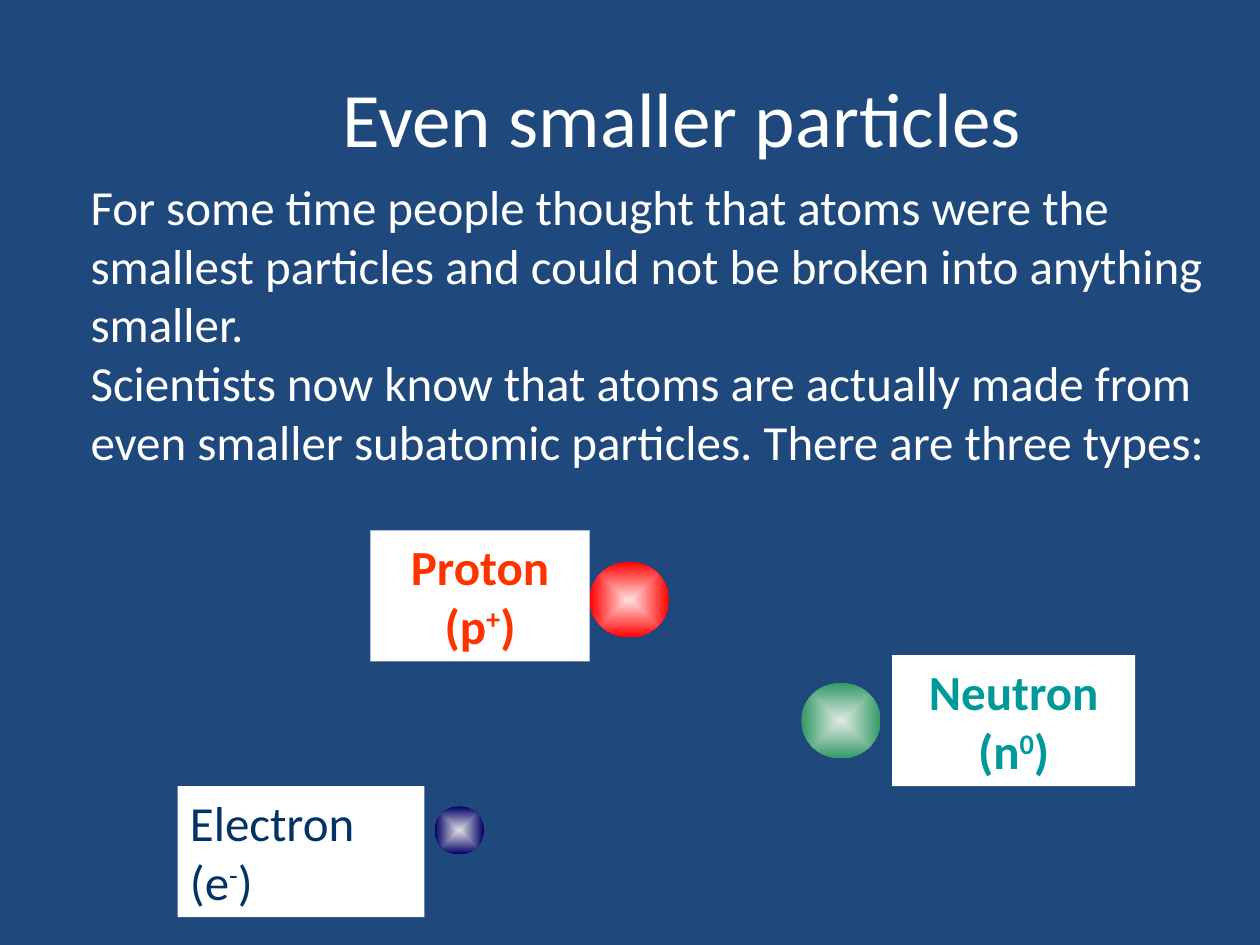
from lxml.etree import SubElement
from pptx import Presentation
from pptx.dml.color import RGBColor
from pptx.enum.shapes import MSO_SHAPE as SHAPE
from pptx.enum.text import MSO_ANCHOR as ANCHOR, PP_ALIGN as ALIGN
from pptx.oxml.ns import qn
from pptx.util import Inches, Pt

COLORS = {
    "background": "1F497D",
    "white": "FFFFFF",
    "proton": "FF3300",
    "neutron": "009999",
    "electron": "013366",
    "proton_core": "FFDEDE",
    "proton_edge": "FF0000",
    "neutron_core": "DFE9E2",
    "neutron_edge": "339966",
    "electron_core": "DEDEE2",
    "electron_edge": "010066",
}
INTRO = [
    "For some time people thought that atoms were the smallest particles "
    "and could not be broken into anything smaller.",
    "Scientists now know that atoms are actually made from even smaller "
    "subatomic particles. There are three types:",
]
PARTICLES = [
    ("proton", "Proton (p", "+", (2.94, 4.21, 1.74, 1.04), (4.68, 4.46, 0.63, 0.6), True),
    ("neutron", "Neutron (n", "0", (7.08, 5.2, 1.93, 1.04), (6.36, 5.42, 0.63, 0.6), True),
    ("electron", "Electron (e", "-", (1.41, 6.24, 1.96, 1.04), (3.45, 6.4, 0.39, 0.38), False),
]


def rgb(name):
    """Return the named colour."""
    return RGBColor.from_string(COLORS[name])


def box(sizes):
    """Turn left, top, width and height in inches into lengths."""
    return [Inches(v) for v in sizes]


def add_text(p, text, size=28, color="white", bold=False, baseline=0):
    """Add one formatted run to a paragraph."""
    r = p.add_run()
    r.text = text
    r.font.name = "Calibri"
    r.font.size = Pt(size)
    r.font.bold = bold
    r.font.color.rgb = rgb(color)
    if baseline:
        r.font._element.set("baseline", str(baseline * 1000))


def add_plain_shape(s, kind, sizes):
    """Add a preset shape without shadow or outline."""
    sp = s.shapes.add_shape(kind, *box(sizes))
    sp.shadow.inherit = False
    sp.line.fill.background()
    return sp


def add_title(s, text):
    """Place the title, set off to the right of the centre."""
    sp = s.shapes.title
    sp.left, sp.top, sp.width, sp.height = box((0.5, 0.3, 9, 1.25))
    tf = sp.text_frame
    tf.vertical_anchor = ANCHOR.MIDDLE
    tf.margin_left = Inches(0.93)
    p = tf.paragraphs[0]
    p.alignment = ALIGN.CENTER
    add_text(p, text, size=44)


def add_intro(s, paragraphs):
    """Add the introductory paragraphs."""
    tf = s.shapes.add_textbox(*box((0.62, 1.35, 9.38, 2.76))).text_frame
    tf.word_wrap = True
    for i, text in enumerate(paragraphs):
        add_text(tf.add_paragraph() if i else tf.paragraphs[0], text)


def add_ball(s, name, sizes):
    """Add a particle shaded from its core to its edge."""
    sp = add_plain_shape(s, SHAPE.OVAL, sizes)
    sp.fill.gradient()
    for stop, part, position in zip(sp.fill.gradient_stops, ("core", "edge"), (0, 1)):
        stop.color.rgb = rgb(f"{name}_{part}")
        stop.position = position
    grad = sp._element.spPr.find(qn("a:gradFill"))
    grad.remove(grad.find(qn("a:lin")))
    path = SubElement(grad, qn("a:path"), {"path": "shape"})
    SubElement(path, qn("a:fillToRect"), dict.fromkeys("ltrb", "50000"))


def add_label(s, name, text, charge, sizes, bold):
    """Add a white label with the particle's name and raised charge."""
    sp = add_plain_shape(s, SHAPE.RECTANGLE, sizes)
    sp.fill.solid()
    sp.fill.fore_color.rgb = rgb("white")
    tf = sp.text_frame
    tf.word_wrap = True
    tf.vertical_anchor = ANCHOR.TOP
    p = tf.paragraphs[0]
    p.alignment = ALIGN.CENTER if bold else ALIGN.LEFT
    for part, baseline in ((text, 0), (charge, 30), (")", 0)):
        add_text(p, part, color=name, bold=bold, baseline=baseline)


def main():
    """Build and save the slide."""
    prs = Presentation()
    prs.slide_width, prs.slide_height = Inches(10), Inches(7.5)
    s = prs.slides.add_slide(prs.slide_layouts[5])
    s.background.fill.solid()
    s.background.fill.fore_color.rgb = rgb("background")
    add_title(s, "Even smaller particles")
    add_intro(s, INTRO)
    for name, text, charge, label, ball, bold in PARTICLES:
        add_ball(s, name, ball)
        add_label(s, name, text, charge, label, bold)
    prs.save("out.pptx")


if __name__ == "__main__":
    main()
